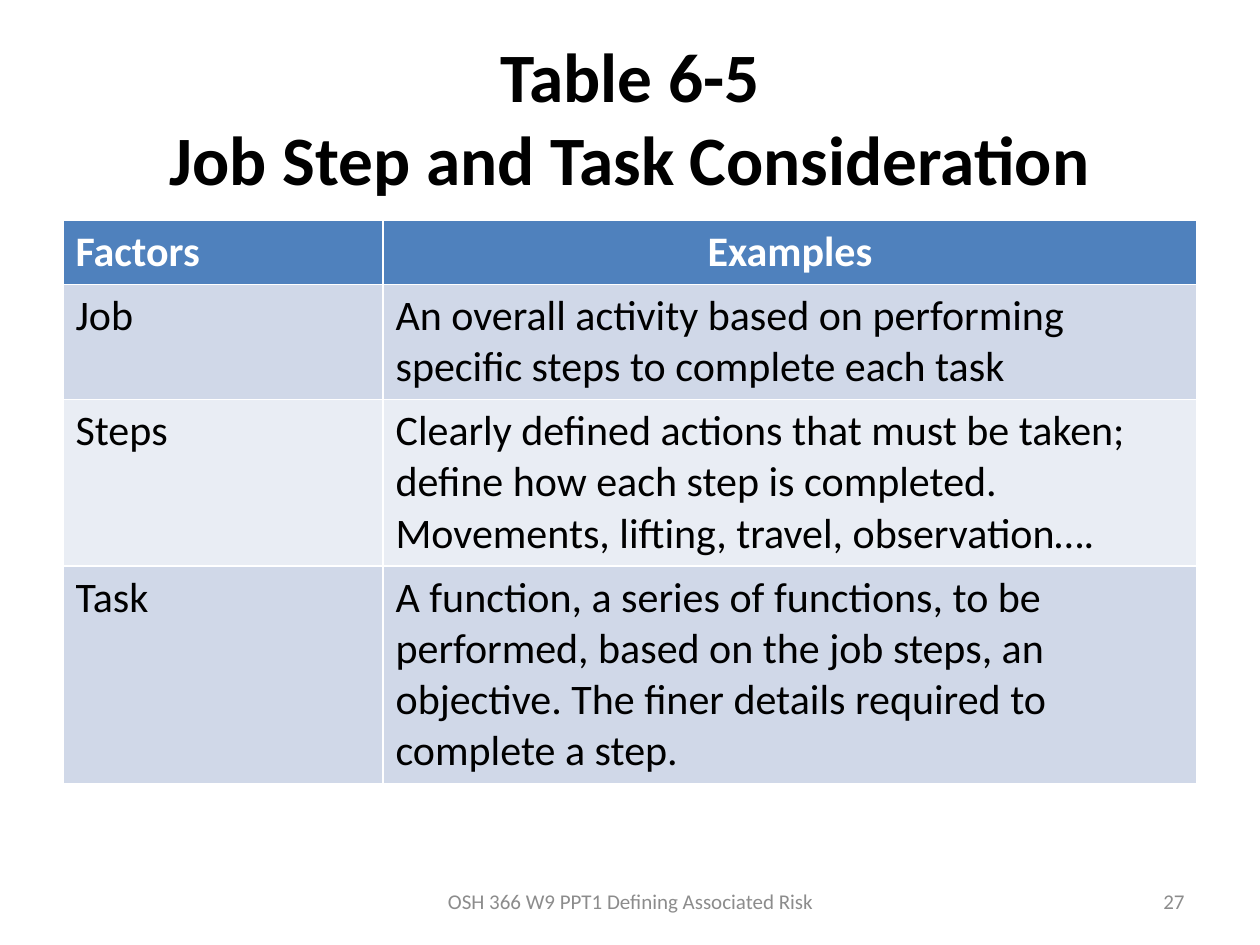
from pptx import Presentation
from pptx.dml.color import RGBColor
from pptx.enum.text import MSO_ANCHOR, MSO_AUTO_SIZE, PP_ALIGN
from pptx.util import Inches, Pt

FONT = "Calibri"
COLORS = {
    "text": "000000",
    "header_text": "FFFFFF",
    "header": "4F81BD",
    "odd_row": "D0D8E8",
    "even_row": "E9EDF4",
    "footer": "8C8C8C",
}
TITLE = "Table 6-5\vJob Step and Task Consideration"
ROWS = [
    ("Factors", "Examples"),
    ("Job", "An overall activity based on performing specific steps to complete each task"),
    ("Steps", "Clearly defined actions that must be taken; define how each step is completed. "
              "Movements, lifting, travel, observation…."),
    ("Task", "A function, a series of functions, to be performed, based on the job steps, "
             "an objective. The finer details required to complete a step."),
]
COLUMN_WIDTHS = [2.54, 6.46]
ROW_HEIGHTS = [0.5, 0.91, 1.32, 1.72]
FOOTERS = [
    ("OSH 366 W9 PPT1 Defining Associated Risk", 3.42, 3.17, PP_ALIGN.CENTER),
    ("27", 7.17, 2.33, PP_ALIGN.RIGHT),
]


def format_text(text_frame, size, color, align=PP_ALIGN.LEFT, bold=False):
    """Format every paragraph of a text frame alike."""
    for paragraph in text_frame.paragraphs:
        paragraph.alignment = align
        paragraph.font.name = FONT
        paragraph.font.size = Pt(size)
        paragraph.font.bold = bold
        paragraph.font.color.rgb = RGBColor.from_string(COLORS[color])


def add_title(slide):
    """Fill and place the title."""
    title = slide.shapes.title
    title.left, title.top, title.width, title.height = map(Inches, (0.5, 0.3, 9, 1.25))
    title.text_frame.text = TITLE
    title.text_frame.auto_size = MSO_AUTO_SIZE.NONE
    title.text_frame.vertical_anchor = MSO_ANCHOR.MIDDLE
    format_text(title.text_frame, 39.6, "text", PP_ALIGN.CENTER, True)


def add_factors(slide):
    """Add the table of factors and examples."""
    factors = slide.shapes.add_table(
        len(ROWS), len(COLUMN_WIDTHS), Inches(0.5), Inches(1.75),
        Inches(sum(COLUMN_WIDTHS)), Inches(sum(ROW_HEIGHTS))).table
    for column, width in zip(factors.columns, COLUMN_WIDTHS):
        column.width = Inches(width)
    for r, (row, height) in enumerate(zip(ROWS, ROW_HEIGHTS)):
        factors.rows[r].height = Inches(height)
        header = r == 0
        fill = "header" if header else "odd_row" if r % 2 else "even_row"
        for c, words in enumerate(row):
            cell = factors.cell(r, c)
            cell.text = words
            cell.fill.solid()
            cell.fill.fore_color.rgb = RGBColor.from_string(COLORS[fill])
            align = PP_ALIGN.CENTER if header and c == 1 else PP_ALIGN.LEFT
            format_text(cell.text_frame, 24, "header_text" if header else "text", align, header)


def add_footers(slide):
    """Add the footer and the slide number."""
    for words, left, width, align in FOOTERS:
        footer = slide.shapes.add_textbox(
            Inches(left), Inches(6.95), Inches(width), Inches(0.4)).text_frame
        footer.text = words
        footer.word_wrap = True
        footer.vertical_anchor = MSO_ANCHOR.MIDDLE
        format_text(footer, 12, "footer", align)


def main():
    """Build the slide and save it."""
    presentation = Presentation()
    presentation.slide_width, presentation.slide_height = Inches(10), Inches(7.5)
    slide = presentation.slides.add_slide(presentation.slide_layouts[5])
    add_title(slide)
    add_factors(slide)
    add_footers(slide)
    presentation.save("out.pptx")


if __name__ == "__main__":
    main()
